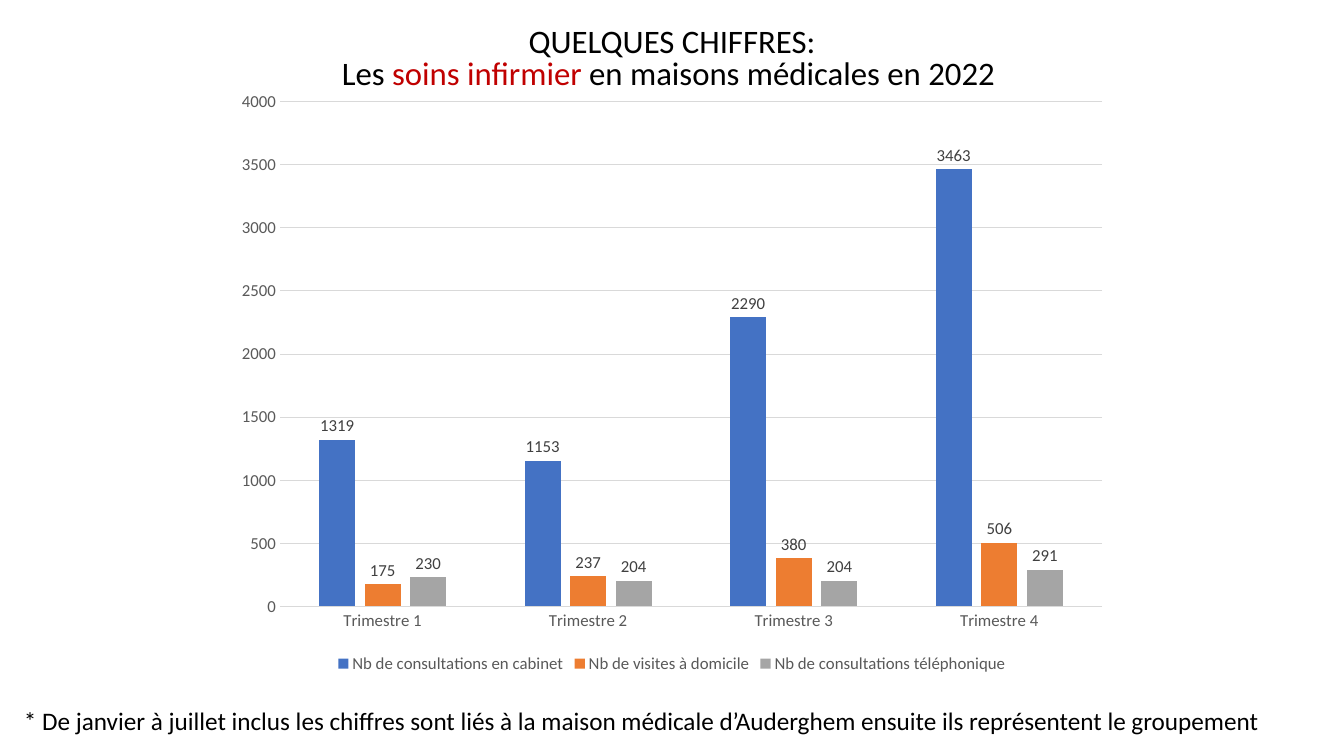
import pptx
import pptx.chart.data
import pptx.dml.color
import pptx.enum.chart
import pptx.enum.text
import pptx.util

Pt = pptx.util.Pt
COLOURS = {
    "text": "000000",
    "accent": "C00000",
    "axis": "595959",
    "label": "404040",
    "grid": "D9D9D9",
    "cabinet": "4472C4",
    "domicile": "ED7D31",
    "telephone": "A5A5A5",
}


class SlideBuilder:
    font_name = "Calibri"

    def __init__(self, slide):
        self.slide = slide

    def colour(self, name):
        return pptx.dml.color.RGBColor.from_string(COLOURS[name])

    def style(self, font, size, colour):
        font.name = self.font_name
        font.size = Pt(size)
        font.color.rgb = self.colour(colour)

    def line(self, line_format):
        line_format.color.rgb = self.colour("grid")
        line_format.width = Pt(0.75)

    def text(self, box, lines, size, align, anchor, spacing=1.0):
        frame = self.slide.shapes.add_textbox(*map(Pt, box)).text_frame
        frame.word_wrap = True
        frame.vertical_anchor = anchor
        for index, runs in enumerate(lines):
            paragraph = frame.paragraphs[0] if index == 0 else frame.add_paragraph()
            paragraph.alignment = align
            paragraph.line_spacing = spacing
            self.style(paragraph.font, size, "text")
            for words, colour in runs:
                run = paragraph.add_run()
                run.text = words
                run.font.color.rgb = self.colour(colour)

    def column_chart(self, box, categories, series):
        figures = pptx.chart.data.CategoryChartData()
        figures.categories = categories
        for name, values, _ in series:
            figures.add_series(name, values)
        kind = pptx.enum.chart.XL_CHART_TYPE.COLUMN_CLUSTERED
        chart = self.slide.shapes.add_chart(kind, *map(Pt, box), figures).chart
        chart.has_title = False
        self.style(chart.font, 10, "text")

        chart.has_legend = True
        chart.legend.position = pptx.enum.chart.XL_LEGEND_POSITION.BOTTOM
        chart.legend.include_in_layout = False
        self.style(chart.legend.font, 12, "axis")

        for axis in (chart.category_axis, chart.value_axis):
            axis.major_tick_mark = pptx.enum.chart.XL_TICK_MARK.NONE
            axis.minor_tick_mark = pptx.enum.chart.XL_TICK_MARK.NONE
            self.style(axis.tick_labels.font, 12, "axis")
        self.line(chart.category_axis.format.line)
        chart.value_axis.format.line.fill.background()
        self.line(chart.value_axis.major_gridlines.format.line)

        plot = chart.plots[0]
        plot.gap_width = 219
        plot.overlap = -27
        plot.vary_by_categories = False
        for columns, (_, _, colour) in zip(plot.series, series):
            columns.invert_if_negative = False
            columns.format.fill.solid()
            columns.format.fill.fore_color.rgb = self.colour(colour)
            labels = columns.data_labels
            labels.show_value = True
            labels.position = pptx.enum.chart.XL_LABEL_POSITION.OUTSIDE_END
            self.style(labels.font, 12, "label")


def main():
    deck = pptx.Presentation()
    deck.slide_width = Pt(960)
    deck.slide_height = Pt(540)
    builder = SlideBuilder(deck.slides.add_slide(deck.slide_layouts[6]))
    align = pptx.enum.text.PP_ALIGN
    anchor = pptx.enum.text.MSO_ANCHOR

    title = [
        [("QUELQUES CHIFFRES:", "text")],
        [
            ("Les ", "text"),
            ("soins infirmier ", "accent"),
            ("en maisons médicales en 2022 ", "text"),
        ],
    ]
    footnote = (
        "* De janvier à juillet inclus les chiffres sont liés à la maison médicale "
        "d’Auderghem ensuite ils représentent le groupement"
    )
    quarters = [f"Trimestre {number}" for number in range(1, 5)]
    care = [
        ("Nb de consultations en cabinet", (1319, 1153, 2290, 3463), "cabinet"),
        ("Nb de visites à domicile", (175, 237, 380, 506), "domicile"),
        ("Nb de consultations téléphonique", (230, 204, 204, 291), "telephone"),
    ]

    builder.text((0, 15, 960, 56), title, 23.4, align.CENTER, anchor.MIDDLE, 0.8)
    builder.text((10, 500.4, 933, 29), [[(footnote, "text")]], 18, align.LEFT, anchor.TOP)
    builder.column_chart((160, 57, 640, 427), quarters, care)
    deck.save("out.pptx")


if __name__ == "__main__":
    main()
